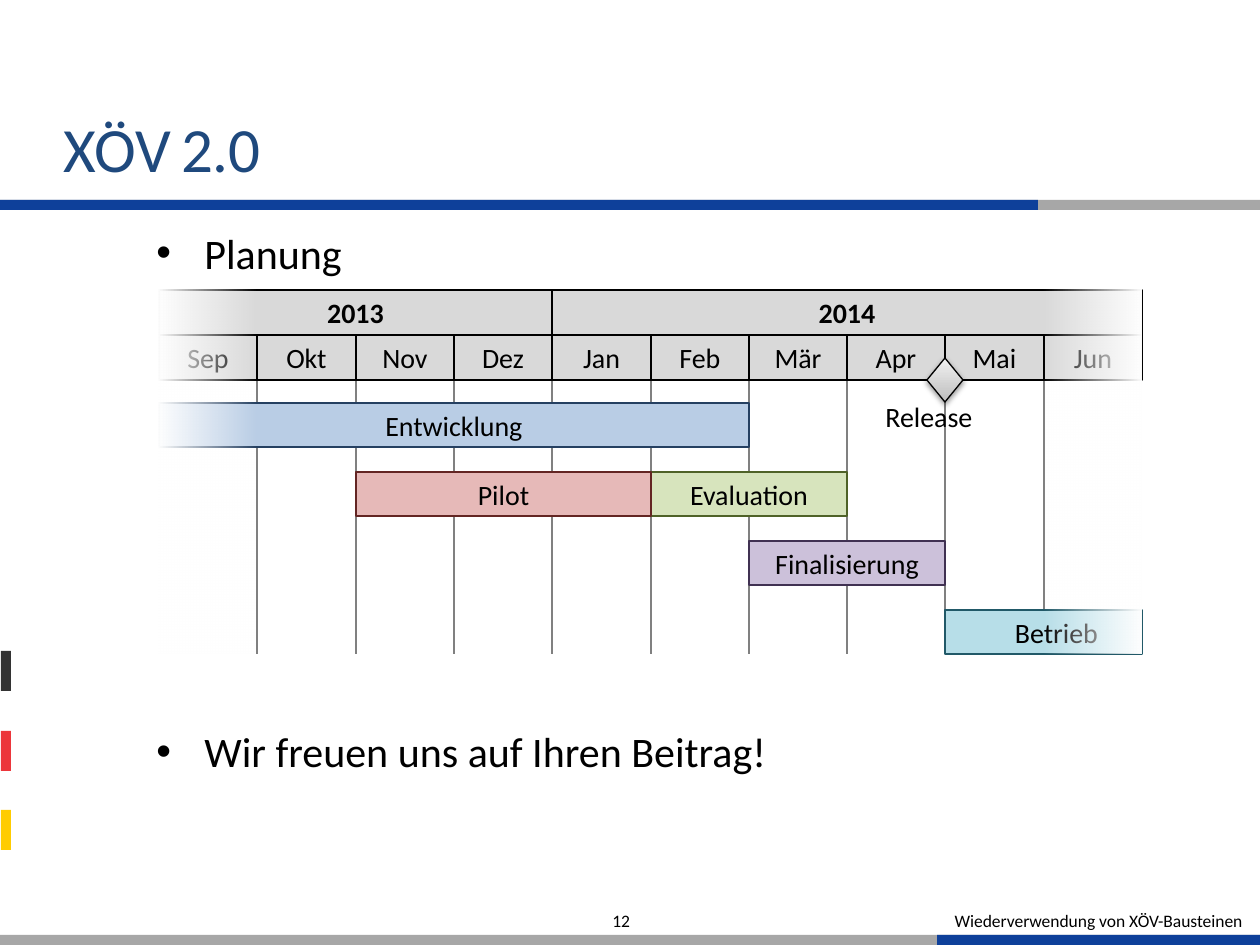
"""Builds the XÖV 2.0 planning slide with a month-by-month schedule."""
from dataclasses import dataclass

from lxml import etree
from pptx import Presentation
from pptx.dml.color import RGBColor
from pptx.enum.shapes import MSO_CONNECTOR, MSO_SHAPE
from pptx.enum.text import MSO_ANCHOR, PP_ALIGN
from pptx.oxml.ns import qn
from pptx.util import Emu, Pt

RECT, DIAMOND = MSO_SHAPE.RECTANGLE, MSO_SHAPE.DIAMOND
STRAIGHT = MSO_CONNECTOR.STRAIGHT
LEFT, CENTER = PP_ALIGN.LEFT, PP_ALIGN.CENTER
TOP, MIDDLE, BOTTOM = MSO_ANCHOR.TOP, MSO_ANCHOR.MIDDLE, MSO_ANCHOR.BOTTOM


@dataclass(frozen=True)
class Theme:
    font: str = "Calibri"
    ink: str = "000000"
    title: str = "1F497D"
    white: str = "FFFFFF"
    blue: str = "0E409A"
    gray: str = "A7A7A7"
    header: str = "D9D9D9"
    grid: str = "808080"
    diamond: tuple = ("BDBDBD", "F2F2F2")
    title_size: int = 36
    body_size: int = 24
    label_size: int = 16
    footer_size: int = 10
    line: float = 0.75


THEME = Theme()
PX = 914400 / 126

TITLE = [("XÖV", THEME.title_size), (" ", THEME.body_size), ("2.0", THEME.title_size)]
BULLETS = ["Planung", "Wir freuen uns auf Ihren Beitrag!"]
BULLET_GAP = 256
FOOTER, PAGE_NUMBER = "Wiederverwendung von XÖV-Bausteinen", "12"
DECORATION = [
    (0, 935, 1260, 10, THEME.gray),
    (0, 200, 1260, 10, THEME.gray),
    (0, 200, 1038, 10, THEME.blue),
    (1, 810, 10, 40, "FFCC00"),
    (1, 731, 10, 40, "EC363B"),
    (1, 651, 10, 40, "333333"),
    (937, 935, 323, 10, THEME.blue),
]
MONTHS = ["Sep", "Okt", "Nov", "Dez", "Jan", "Feb", "Mär", "Apr", "Mai", "Jun"]
YEARS = [("2013", 0, 4), ("2014", 4, 10)]
TASKS = [
    ("Entwicklung", 0, 6, 0, "B9CDE5", "254061", 0),
    ("Evaluation", 5, 7, 1, "D7E4BD", "4F6228", 0),
    ("Pilot", 2, 5, 1, "E6B9B8", "632523", 0),
    ("Finalisierung", 6, 8, 2, "CCC1DA", "403152", 0),
    ("Betrieb", 8, 10, 3, "B7DEE8", "215968", 26),
]
RELEASE, RELEASE_MONTH = "Release", 8
CHART_LEFT, CHART_WIDTH = 159, 983
YEAR_TOP, MONTH_TOP, GRID_TOP, GRID_BOTTOM = 290, 335, 348, 654
TASK_TOP, TASK_STEP, BAR_HEIGHT = 403, 69, 44


def px(value):
    return Emu(round(value * PX))


def rgb(value):
    return RGBColor.from_string(value)


def edge(month):
    return CHART_LEFT + round(CHART_WIDTH * month / len(MONTHS))


def add_text(shape, paragraphs, size=THEME.label_size, color=THEME.ink, bold=False,
             align=LEFT, anchor=TOP, wrap=True, insets=None, bullet_indent=0, gap=0):
    frame = shape.text_frame
    frame.word_wrap, frame.vertical_anchor = wrap, anchor
    if insets:
        (frame.margin_left, frame.margin_top,
         frame.margin_right, frame.margin_bottom) = map(px, insets)
    for index, content in enumerate(paragraphs):
        para = frame.add_paragraph() if index else frame.paragraphs[0]
        para.alignment = align
        if index:
            para.space_before = Pt(gap)
        if bullet_indent:
            properties = para._p.get_or_add_pPr()
            properties.set("marL", str(px(bullet_indent)))
            properties.set("indent", str(-px(bullet_indent)))
            etree.SubElement(properties, qn("a:buFont"), typeface="Arial")
            etree.SubElement(properties, qn("a:buChar"), char="•")
        for text, run_size in [(content, size)] if isinstance(content, str) else content:
            span = para.add_run()
            span.text = text
            span.font.name, span.font.size = THEME.font, Pt(run_size)
            span.font.bold, span.font.color.rgb = bold, rgb(color)


def add_box(page, left, top, width, height):
    return page.shapes.add_textbox(px(left), px(top), px(width), px(height))


def add_block(page, left, top, width, height, fill=None, line=None, kind=RECT):
    shape = page.shapes.add_shape(kind, px(left), px(top), px(width), px(height))
    shape.shadow.inherit = False
    if fill:
        shape.fill.solid()
        shape.fill.fore_color.rgb = rgb(fill)
    if line:
        shape.line.color.rgb, shape.line.width = rgb(line), Pt(THEME.line)
    else:
        shape.line.fill.background()
    return shape


def set_alpha(color, percent):
    etree.SubElement(color, qn("a:alpha"), val=str(percent * 1000))


def set_gradient(shape, colors, angle):
    shape.fill.gradient()
    shape.fill.gradient_angle = angle
    for stop, color in zip(shape.fill.gradient_stops, colors):
        stop.color.rgb = rgb(color)


def add_fade(page, month, angle):
    left = edge(month)
    fade = add_block(page, left, YEAR_TOP, edge(month + 1) - left, GRID_BOTTOM - YEAR_TOP)
    set_gradient(fade, (THEME.white, THEME.white), angle)
    set_alpha(next(fade._element.spPr.iter(qn("a:srgbClr"))), 0)


def add_grid_line(page, month):
    line = page.shapes.add_connector(
        STRAIGHT, px(edge(month)), px(GRID_TOP), px(edge(month)), px(GRID_BOTTOM))
    line.line.color.rgb, line.line.width = rgb(THEME.grid), Pt(THEME.line)
    etree.SubElement(line._element.spPr, qn("a:effectLst"))


def add_span(page, label, start, end, top, height, fill, line, bold=False, shift=0):
    block = add_block(page, edge(start), top, edge(end) - edge(start), height, fill, line)
    add_text(block, [label], bold=bold, align=CENTER, anchor=MIDDLE,
             insets=(12 + shift, 6, 12, 6))


def add_milestone(page):
    diamond = add_block(page, edge(RELEASE_MONTH) - 18, 358, 36, 44,
                        line=THEME.ink, kind=DIAMOND)
    set_gradient(diamond, THEME.diamond, 90)
    effects = diamond._element.spPr.find(qn("a:effectLst"))
    shadow = etree.SubElement(effects, qn("a:outerShdw"), blurRad=str(Pt(3.1)),
                              dist=str(Pt(1.6)), dir="5400000", rotWithShape="0")
    set_alpha(etree.SubElement(shadow, qn("a:srgbClr"), val=THEME.ink), 38)


def add_schedule(page):
    for month in range(1, len(MONTHS)):
        add_grid_line(page, month)
    add_text(add_box(page, 873, 393, 134, 47), [RELEASE], wrap=False)
    for index, month in enumerate(MONTHS):
        add_span(page, month, index, index + 1, MONTH_TOP, 45, THEME.header, THEME.ink)
    for year, start, end in YEARS:
        add_span(page, year, start, end, YEAR_TOP, 45, THEME.header, THEME.ink, bold=True)
    for label, start, end, row, fill, line, shift in TASKS:
        add_span(page, label, start, end, TASK_TOP + row * TASK_STEP, BAR_HEIGHT,
                 fill, line, shift=shift)
    add_milestone(page)
    add_fade(page, 0, 180)
    add_fade(page, len(MONTHS) - 1, 0)


def main():
    deck = Presentation()
    deck.slide_width, deck.slide_height = px(1260), px(945)
    page = deck.slides.add_slide(deck.slide_layouts[6])
    for left, top, width, height, color in DECORATION:
        add_block(page, left, top, width, height, color)
    add_text(add_box(page, 64, 38, 973, 147), [TITLE], color=THEME.title,
             anchor=BOTTOM, insets=(0, 0, 0, 0))
    add_text(add_box(page, 144, 221, 1053, 624), BULLETS, size=THEME.body_size,
             bullet_indent=48, gap=BULLET_GAP)
    add_text(add_box(page, 937, 897, 323, 48), [FOOTER], size=THEME.footer_size,
             align=CENTER, anchor=MIDDLE)
    add_text(add_box(page, 600, 897, 234, 48), [PAGE_NUMBER], size=THEME.footer_size,
             anchor=MIDDLE)
    add_schedule(page)
    deck.save("out.pptx")


if __name__ == "__main__":
    main()
